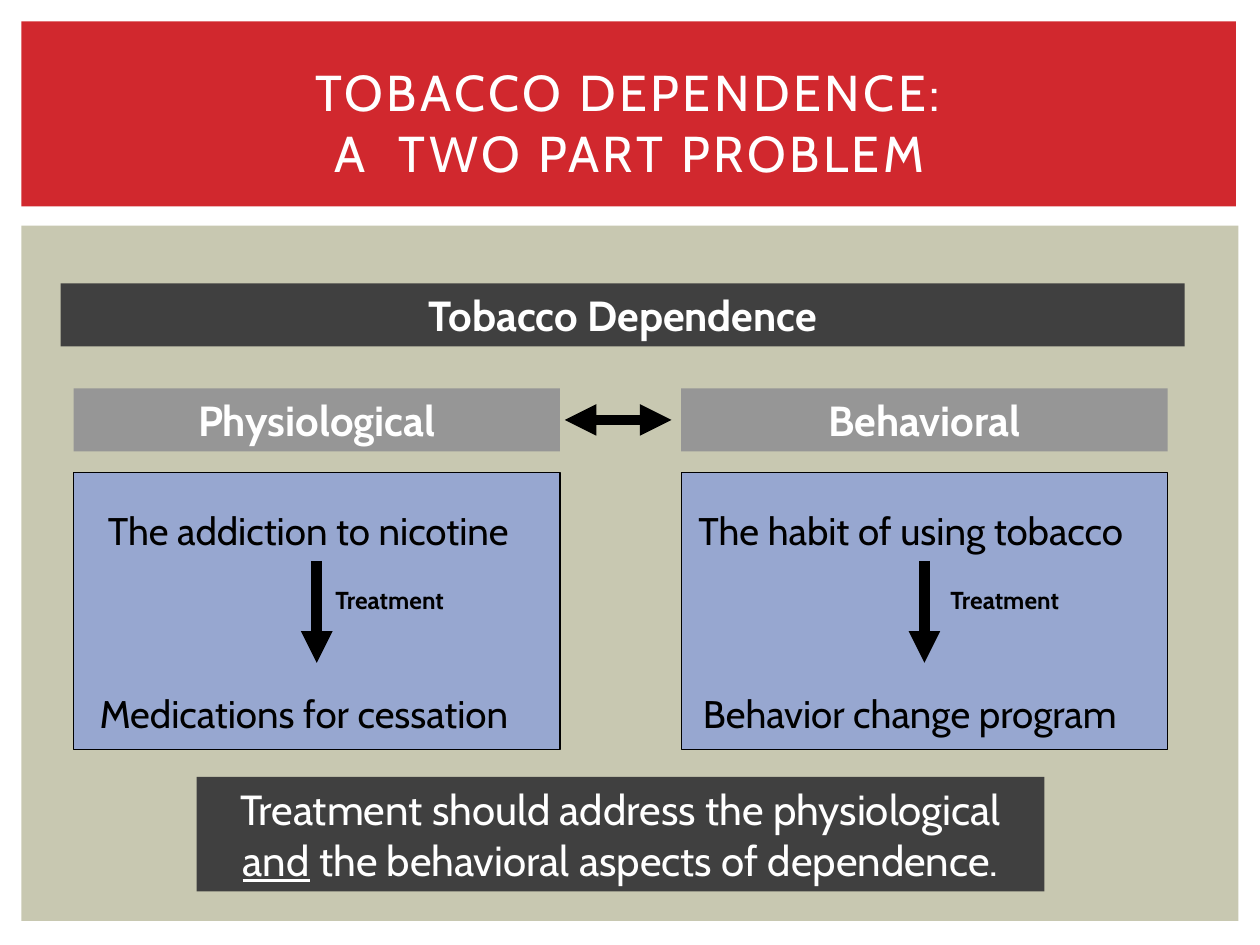
from lxml import etree
from pptx import Presentation
from pptx.dml.color import RGBColor
from pptx.enum.shapes import MSO_CONNECTOR, MSO_SHAPE
from pptx.enum.text import MSO_ANCHOR, MSO_AUTO_SIZE, PP_ALIGN
from pptx.oxml.ns import qn
from pptx.util import Pt

RECT, STRAIGHT = MSO_SHAPE.RECTANGLE, MSO_CONNECTOR.STRAIGHT
LEFT, CENTER = PP_ALIGN.LEFT, PP_ALIGN.CENTER
TOP, MIDDLE = MSO_ANCHOR.TOP, MSO_ANCHOR.MIDDLE
NO_FIT = MSO_AUTO_SIZE.NONE

WHITE, BLACK = "FFFFFF", "000000"
RED, SAND, DARK, GREY, BLUE = "D1282E", "C8C8B1", "404040", "969696", "97A7D0"


def rgb(value):
    return RGBColor.from_string(value)


class Deck:
    font = "Cabin"

    def __init__(self, width, height):
        self.prs = Presentation()
        self.prs.slide_width, self.prs.slide_height = Pt(width), Pt(height)
        self.s = self.prs.slides.add_slide(self.prs.slide_layouts[5])

    def style(self, p, size, color, align, bold=False):
        p.alignment = align
        p.font.name, p.font.size, p.font.bold = self.font, Pt(size), bold
        p.font.color.rgb = rgb(color)

    def title(self, lines, x, y, w, h):
        sp = self.s.shapes.title
        sp.left, sp.top, sp.width, sp.height = Pt(x), Pt(y), Pt(w), Pt(h)
        tf = sp.text_frame
        tf.auto_size, tf.vertical_anchor = NO_FIT, MIDDLE
        p = tf.paragraphs[0]
        for i, line in enumerate(lines):
            if i:
                p.add_line_break()
            r = p.add_run()
            r.text = line
            r.font._element.set("spc", "200")  # letter spacing of 2 pt
        self.style(p, 28.8, WHITE, CENTER)

    def rect(self, x, y, w, h, fill, line=None):
        sp = self.s.shapes.add_shape(RECT, Pt(x), Pt(y), Pt(w), Pt(h))
        sp.shadow.inherit = False
        sp.fill.solid()
        sp.fill.fore_color.rgb = rgb(fill)
        if line:
            sp.line.color.rgb = rgb(line)
            sp.line.width = Pt(0.75)
        else:
            sp.line.fill.background()
        return sp

    def banner(self, runs, x, y, w, h, fill, bold=True):
        """Filled bar with centred white text; runs are (text, underline)."""
        tf = self.rect(x, y, w, h, fill).text_frame
        tf.word_wrap, tf.vertical_anchor = True, MIDDLE
        p = tf.paragraphs[0]
        for text, underline in runs:
            r = p.add_run()
            r.text = text
            if underline:
                r.font.underline = True
        self.style(p, 24, WHITE, CENTER, bold)

    def label(self, text, x, y, w, h, size, bold=False):
        tf = self.rect(x, y, w, h, BLUE).text_frame
        tf.word_wrap, tf.vertical_anchor = False, TOP
        p = tf.paragraphs[0]
        p.text = text
        self.style(p, size, BLACK, LEFT, bold)

    def arrow(self, x1, y1, x2, y2, ends=("tailEnd",)):
        c = self.s.shapes.add_connector(STRAIGHT, Pt(x1), Pt(y1), Pt(x2), Pt(y2))
        c.line.color.rgb = rgb(BLACK)
        c.line.width = Pt(6)
        for end in ends:
            etree.SubElement(c.line._get_or_add_ln(), qn("a:" + end), type="triangle")
        etree.SubElement(c._element.spPr, qn("a:effectLst"))


def main():
    d = Deck(720, 540)

    # Background panels and title
    d.rect(12.25, 128.9, 695.5, 397.4, SAND)
    d.rect(12.25, 12.25, 694, 105.8, RED)
    d.title(["TOBACCO DEPENDENCE:", "A  TWO PART PROBLEM"], 30, 28, 660, 83)
    # Bring the title in front of the panels
    d.s.shapes._spTree.append(d.s.shapes.title._element)

    # Heading and conclusion
    d.banner([("Tobacco Dependence", False)], 34.7, 162, 642.3, 36, DARK)
    d.banner([("Treatment should address the physiological ", False), ("and", True),
              (" the behavioral aspects of dependence.", False)],
             112.4, 444, 484.5, 65.4, DARK, bold=False)

    # Columns: left edge, heading, then (text, left, width) for problem and
    # remedy, and the left edge of the treatment label
    columns = [
        (42, "Physiological", ("The addiction to nicotine", 54.5, 253.5),
         ("Medications for cessation", 49.8, 263), 184.5),
        (389.25, "Behavioral", ("The habit of using tobacco", 392, 273),
         ("Behavior change program", 394.6, 268), 536),
    ]
    width = 278
    for x, heading, problem, remedy, label_x in columns:
        d.banner([(heading, False)], x, 222, width, 36, GREY)
        d.rect(x, 270, width, 158.25, BLUE, BLACK)
        d.label("Treatment", label_x, 330.5, 82, 21, 14, bold=True)
        for (text, left, w), y in ((problem, 286), (remedy, 391)):
            d.label(text, left, y, w, 28, 22)
        d.arrow(x + width / 2, 320.5, x + width / 2, 378.75)

    # Link between the two columns
    d.arrow(322.75, 240, 383.75, 240, ends=("headEnd", "tailEnd"))

    d.prs.save("out.pptx")


if __name__ == "__main__":
    main()
